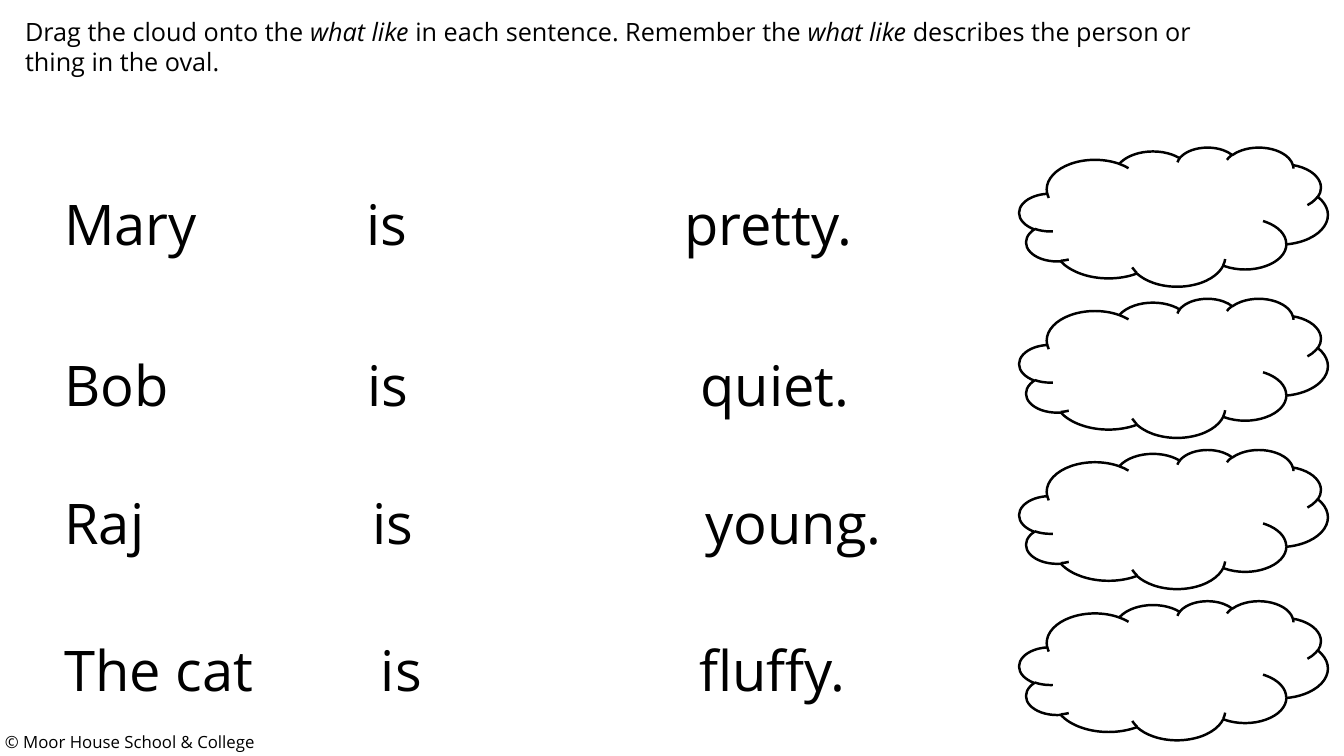
from dataclasses import dataclass

from lxml.etree import SubElement
from pptx import Presentation
from pptx.dml.color import RGBColor
from pptx.enum.shapes import MSO_SHAPE
from pptx.enum.text import MSO_AUTO_SIZE
from pptx.oxml.ns import qn
from pptx.util import Inches, Pt


@dataclass(frozen=True)
class Theme:
    """Hold the colours, font and type sizes."""
    ink: RGBColor = RGBColor(0, 0, 0)
    paper: RGBColor = RGBColor(255, 255, 255)
    font: str = "Open Sans"
    large: int = 40
    body: int = 18
    small: int = 12
    line: float = 1.75


@dataclass(frozen=True)
class Grid:
    """Hold the slide size and the places of rows and columns in inches."""
    wide: float = 13.33
    high: float = 7.5
    left: float = 0.54
    text: float = 0.77
    cloud: float = 10.11
    top: float = 1.46
    step: float = 1.5


THEME = Theme()
GRID = Grid()

TASK = [
    ("Drag the cloud onto the ", False),
    ("what like ", True),
    ("in each sentence. Remember the ", False),
    ("what like ", True),
    ("describes the person or thing in the oval.", False),
]

ROWS = [
    (1.83, 8.22, ("Mary", "is", "pretty."), (3.0, 6.15)),
    (3.43, 8.22, ("Bob", "is", "quiet."), (3.01, 6.31)),
    (4.8, 10.26, ("Raj", "is", "young."), (3.06, 6.36)),
    (6.26, 10.1, ("The cat", "is", "fluffy."), (3.14, 6.3)),
]


def add_text(slide, box, runs, size, tabs=()):
    """Add a text box of plain and italic runs with optional tab stops."""
    frame = slide.shapes.add_textbox(*map(Inches, box)).text_frame
    frame.word_wrap = True
    frame.auto_size = MSO_AUTO_SIZE.SHAPE_TO_FIT_TEXT
    para = frame.paragraphs[0]
    if tabs:
        stops = SubElement(para._p.get_or_add_pPr(), qn("a:tabLst"))
        for tab in tabs:
            SubElement(stops, qn("a:tab"), pos=str(Inches(tab)), algn="l")
    for words, slant in runs:
        run = para.add_run()
        run.text = words
        run.font.name = THEME.font
        run.font.size = Pt(size)
        run.font.italic = slant
        run.font.color.rgb = THEME.ink


def add_row(slide, top, width, words, tabs):
    """Add one sentence with its words set on tab stops."""
    box = GRID.left, top, width, GRID.text
    add_text(slide, box, [("\t".join(words), False)], THEME.large, tabs)


def add_cloud(slide, row):
    """Add the outline of a cloud in the given row."""
    box = GRID.cloud, GRID.top + row * GRID.step, 3.06, 1.38
    cloud = slide.shapes.add_shape(MSO_SHAPE.CLOUD, *map(Inches, box))
    cloud.shadow.inherit = False
    cloud.fill.background()
    cloud.line.color.rgb = THEME.ink
    cloud.line.width = Pt(THEME.line)


def main():
    """Build the slide and save it."""
    deck = Presentation()
    deck.slide_width = Inches(GRID.wide)
    deck.slide_height = Inches(GRID.high)
    slide = deck.slides.add_slide(deck.slide_layouts[6])
    slide.background.fill.solid()
    slide.background.fill.fore_color.rgb = THEME.paper
    add_text(slide, (-0.05, 7.21, 5.12, 0.3),
             [("© Moor House School & College", False)], THEME.small)
    add_text(slide, (0.15, 0.11, 11.98, 0.71), TASK, THEME.body)
    for row in ROWS:
        add_row(slide, *row)
    for row in range(len(ROWS)):
        add_cloud(slide, row)
    deck.save("out.pptx")


if __name__ == "__main__":
    main()
